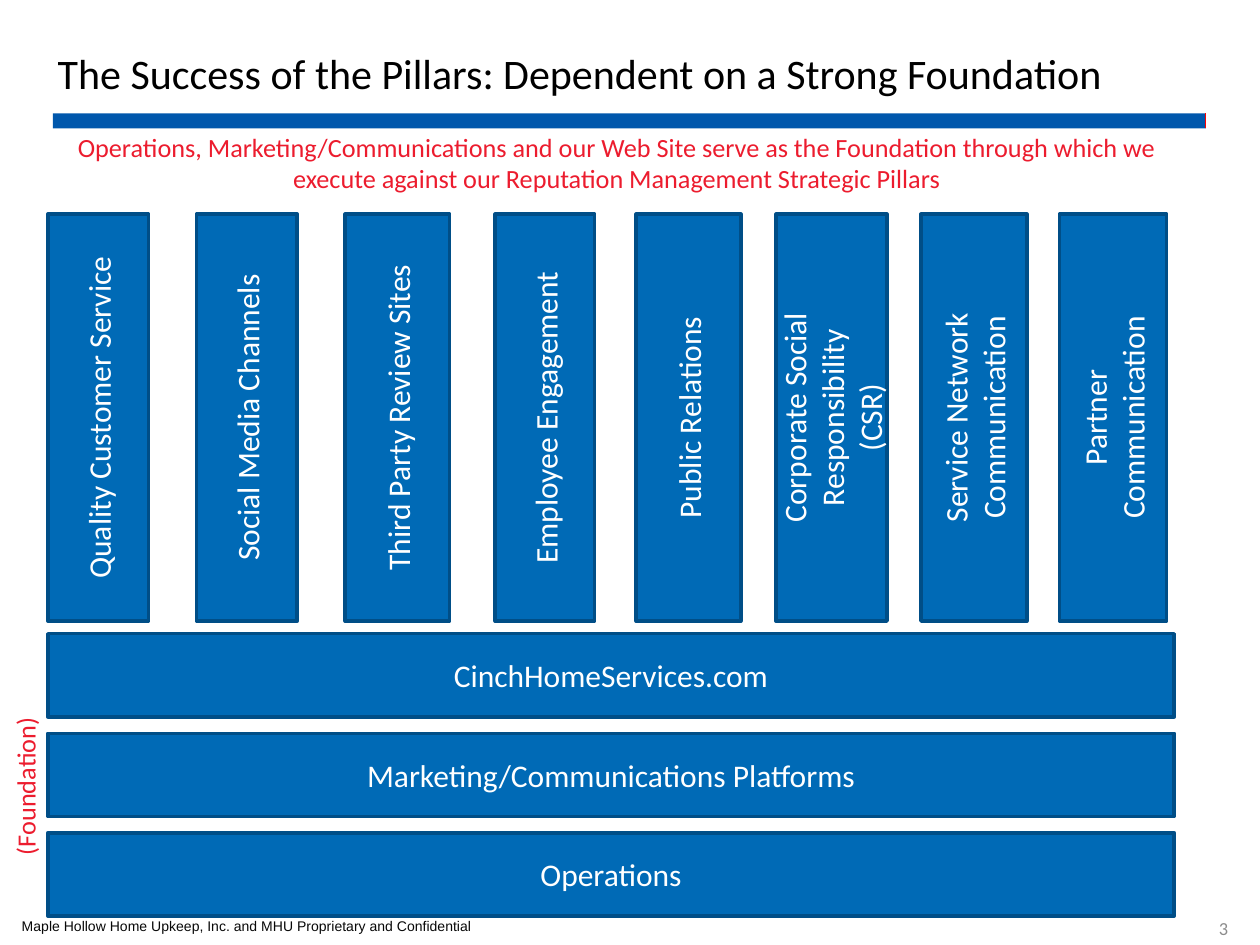
from dataclasses import dataclass

from lxml.etree import SubElement
from pptx import Presentation
from pptx.dml.color import RGBColor
from pptx.enum.shapes import MSO_CONNECTOR, MSO_SHAPE
from pptx.enum.text import MSO_ANCHOR, PP_ALIGN
from pptx.oxml.ns import qn
from pptx.util import Inches, Pt


@dataclass(frozen=True)
class Theme:
    block: str = "006AB6"
    block_edge: str = "004E87"
    rule: str = "0057AC"
    rule_end: str = "FF0000"
    accent: str = "EC1C2E"
    title: str = "000000"
    light: str = "FFFFFF"
    footer: str = "080808"
    page: str = "8C8C8C"
    font: str = "Calibri"
    footer_font: str = "Arial"
    title_size: float = 24
    block_size: float = 18
    note_size: float = 15
    page_size: float = 10.5
    footer_size: float = 8


THEME = Theme()

PILLARS = [  # left offset, width, paragraphs
    (0, 0.80, ["Quality Customer Service"]),
    (1.18, 0.80, ["Social Media Channels"]),
    (2.36, 0.83, ["Third Party Review Sites"]),
    (3.55, 0.79, ["Employee Engagement"]),
    (4.67, 0.83, ["Public Relations"]),
    (5.78, 0.88, ["Corporate Social Responsibility", "(CSR)"]),
    (6.93, 0.84, ["Service Network Communication"]),
    (8.03, 0.85, ["Partner", "Communication"]),
]
FOUNDATION = ["CinchHomeServices.com", "Marketing/Communications Platforms", "Operations"]


def apply(target, values):
    for name, value in values.items():
        setattr(target, name, value)


def write(frame, paragraphs, size, color, font=THEME.font, align=PP_ALIGN.CENTER,
          spacing=None, **frame_format):
    apply(frame, {"word_wrap": True, **frame_format})
    for index, text in enumerate(paragraphs):
        paragraph = frame.paragraphs[0] if index == 0 else frame.add_paragraph()
        apply(paragraph, {"text": text, "alignment": align, "line_spacing": spacing})
        apply(paragraph.font, {"size": Pt(size), "name": font})
        paragraph.font.color.rgb = RGBColor.from_string(color)


def add_label(slide, box, text, size, color, rotation=0, **text_format):
    label = slide.shapes.add_textbox(*map(Inches, box))
    label.rotation = rotation
    write(label.text_frame, [text], size, color, **text_format)


def add_block(slide, box, fill, edge=None):
    block = slide.shapes.add_shape(MSO_SHAPE.RECTANGLE, *map(Inches, box))
    block.shadow.inherit = False
    block.fill.solid()
    block.fill.fore_color.rgb = RGBColor.from_string(fill)
    if edge:
        block.line.color.rgb = RGBColor.from_string(edge)
        block.line.width = Pt(2)
    else:
        block.line.fill.background()
    return block


def add_text_block(slide, box, paragraphs, upright=False):
    frame = add_block(slide, box, THEME.block, THEME.block_edge).text_frame
    write(frame, paragraphs, THEME.block_size, THEME.light,
          vertical_anchor=MSO_ANCHOR.MIDDLE)
    if upright:
        frame._txBody.bodyPr.set("vert", "vert270")


def add_header(slide, box):
    left, top, width, height = box
    add_label(slide, (left, top, 8.57, 0.5),
              "The Success of the Pillars: Dependent on a Strong Foundation",
              THEME.title_size, THEME.title, align=PP_ALIGN.LEFT, word_wrap=False)

    # Rule with a thin red end
    rule_top, rule_height = top + 0.57, 0.12
    add_block(slide, (left + 0.06, rule_top, width - 0.08, rule_height), THEME.rule)
    end_x = Inches(left + width - 0.02)
    end = slide.shapes.add_connector(MSO_CONNECTOR.STRAIGHT, end_x, Inches(rule_top),
                                     end_x, Inches(rule_top + rule_height))
    end.line.color.rgb = RGBColor.from_string(THEME.rule_end)
    end.line.width = Pt(0.75)
    SubElement(end._element.spPr, qn("a:effectLst"))

    # Statement under the rule
    add_label(slide, (left - 0.16, top + 0.66, width + 0.16, height - 0.66),
              "Operations, Marketing/Communications and our Web Site serve as the "
              "Foundation through which we execute against our Reputation Management "
              "Strategic Pillars", THEME.note_size, THEME.accent)


def add_pillars(slide, box):
    left, top, _, height = box
    for offset, pillar_width, paragraphs in PILLARS:
        add_text_block(slide, (left + offset, top, pillar_width, height),
                       paragraphs, upright=True)


def add_foundation(slide, box):
    left, top, width, height = box
    layer_height = 0.66
    step = (height - layer_height) / (len(FOUNDATION) - 1)
    for index, layer in enumerate(FOUNDATION):
        add_text_block(slide, (left, top + index * step, width, layer_height), [layer])
    add_label(slide, (left - 0.83, top + 1.03, 1.3, 0.35), "(Foundation)",
              THEME.note_size, THEME.accent, rotation=270,
              align=PP_ALIGN.LEFT, word_wrap=False)


def add_footer(slide, box):
    left, top, width, height = box
    add_label(slide, (left, top + 0.15, 3.92, 0.22),
              "Maple Hollow Home Upkeep, Inc. and MHU Proprietary and Confidential",
              THEME.footer_size, THEME.footer, font=THEME.footer_font, spacing=0.9)
    add_label(slide, (left + width - 0.58, top, 0.58, height), "3",
              THEME.page_size, THEME.page, vertical_anchor=MSO_ANCHOR.BOTTOM)


def main():
    presentation = Presentation()
    apply(presentation, {"slide_width": Inches(10), "slide_height": Inches(7.5)})
    slide = presentation.slides.add_slide(presentation.slide_layouts[6])
    add_footer(slide, (0, 7.1, 10, 0.4))
    add_header(slide, (0.36, 0.33, 9.23, 1.27))
    add_pillars(slide, (0.38, 1.7, 8.88, 3.23))
    add_foundation(slide, (0.38, 5.03, 8.94, 2.24))
    presentation.save("out.pptx")


if __name__ == "__main__":
    main()
